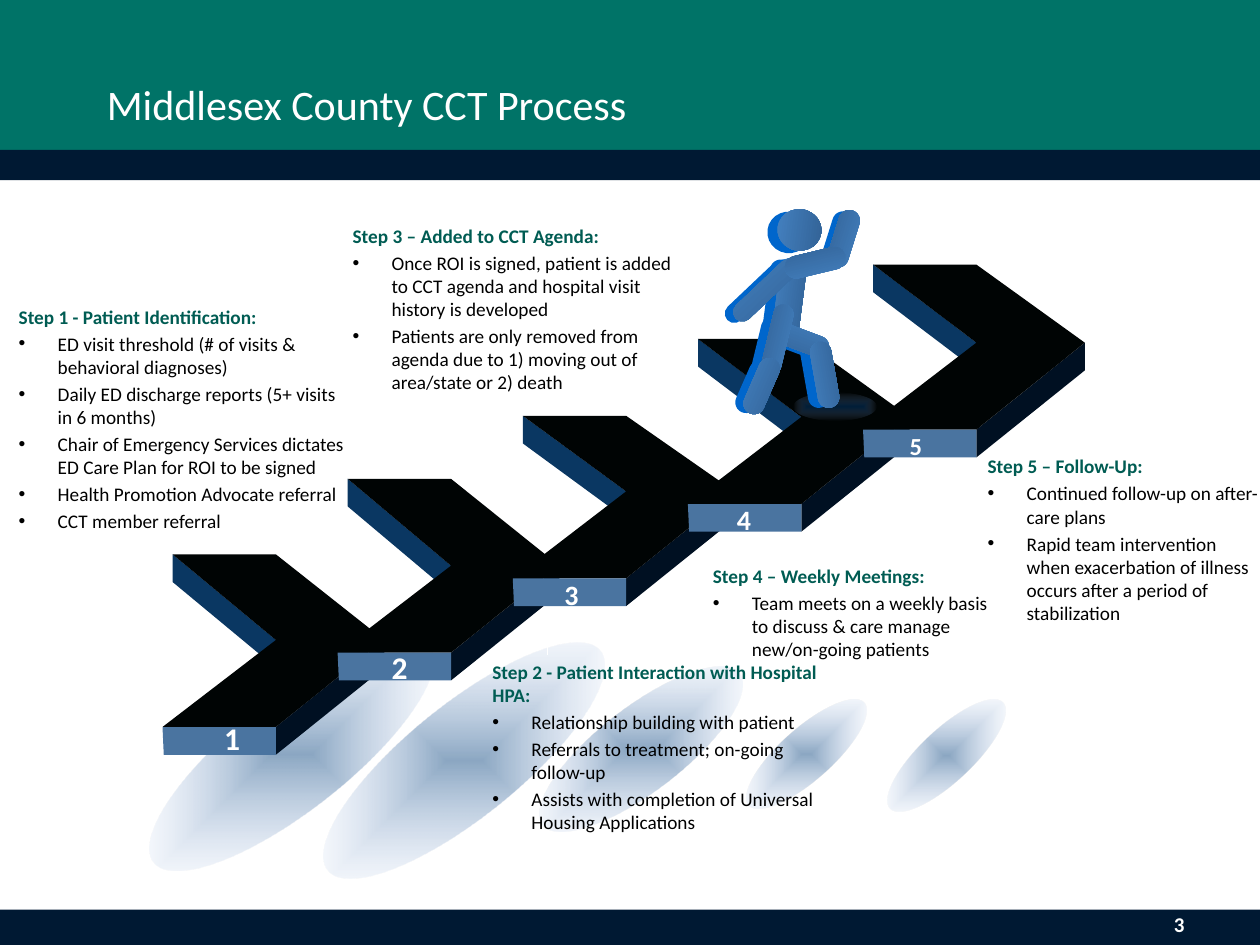
from lxml import etree
from pptx import Presentation, util as u
from pptx.dml.color import RGBColor
from pptx.enum import dml, shapes, text
from pptx.oxml import ns

FONT = "Calibri"
GREEN, NAVY, WHITE, BLACK = "007367", "001933", "FFFFFF", "000000"
TEAL, BLUE = "005C53", "0066CC"
SHADE = ("4481C1", "326295")
GLOW = ("003D7A", "A4BEEF")

STEPS = [
    (4.4, 18, (1.68, 5.67)), (3.8, 18, (3.01, 5.11)), (3.3, 16, (4.38, 4.53)),
    (2.69, 16, (5.75, 3.94)), (2.1, 14, (7.12, 3.35)),
]
GLOWS = [
    (0.93, 5.54, 2.77, 0.89, 321.9), (2.3, 5.59, 2.77, 0.89, 321.1),
    (4.1, 5.61, 1.97, 0.67, 322.4), (5.79, 5.78, 1.22, 0.41, 318.6),
    (6.9, 5.79, 1.22, 0.41, 316.9),
]
BACK = [
    ("limb", 6.56, 1.67, 0.17, 0.47, 197.4), ("limb", 6.29, 1.86, 0.16, 0.49, 256.5),
    ("head", 6.09, 1.68, 0.34, 0.33, 7.4), ("limb", 5.93, 2, 0.15, 0.64, 46.5),
    ("trunk", 6.08, 2.06, 0.21, 0.65, 7.4), ("limb", 6.19, 2.46, 0.16, 0.48, 110.5),
    ("limb", 6.38, 2.69, 0.17, 0.55, 350), ("limb", 6, 2.51, 0.15, 0.51, 193.6),
    ("limb", 5.89, 2.85, 0.17, 0.44, 23.7),
]
FRONT = [
    ("trunk", 6.16, 2.05, 0.21, 0.66, 7.4), ("limb", 6.26, 2.45, 0.17, 0.49, 110.5),
    ("limb", 6.46, 2.71, 0.17, 0.53, 350), ("head", 6.17, 1.66, 0.35, 0.33, 7.4),
    ("limb", 6, 1.98, 0.15, 0.65, 46.5), ("limb", 6.61, 1.66, 0.17, 0.47, 197.4),
    ("limb", 6.09, 2.41, 0.16, 0.57, 193.5), ("limb", 5.96, 2.83, 0.17, 0.47, 23.5),
    ("limb", 6.38, 1.84, 0.18, 0.49, 256.5),
]
LINES = [(1.52, 3.93, 4.29), (3.15, 3.32, 3.69), (4.34, 4.89, 5.19), (5.8, 4.31, 4.61)]
NOTES = [
    ((0.05, 2.37, 2.8, 1.94), "Step 1 - Patient Identification:",
     ["ED visit threshold (# of visits & behavioral diagnoses)",
      "Daily ED discharge reports (5+ visits in 6 months)",
      "Chair of Emergency Services dictates ED Care Plan for ROI to be signed",
      "Health Promotion Advocate referral", "CCT member referral"]),
    ((3.81, 5.19, 2.8, 1.74), "Step 2 - Patient Interaction with Hospital HPA:",
     ["Relationship building with patient", "Referrals to treatment; on-going follow-up",
      "Assists with completion of Universal Housing Applications"]),
    ((2.7, 1.73, 2.8, 1.48), "Step 3 – Added to CCT Agenda:",
     ["Once ROI is signed, patient is added to CCT agenda and hospital visit history is developed",
      "Patients are only removed from agenda due to 1) moving out of area/state or 2) death"]),
    ((5.56, 4.43, 2.54, 0.76), "Step 4 – Weekly Meetings:",
     ["Team meets on a weekly basis to discuss & care manage new/on-going patients"]),
    ((7.74, 3.56, 2.36, 1.33), "Step 5 – Follow-Up:",
     ["Continued follow-up on after-care plans",
      "Rapid team intervention when exacerbation of illness occurs after a period of stabilization"]),
]


def tint(code):
    """Turn a hex string into a colour."""
    return RGBColor.from_string(code)


def child(node, tag, **attrs):
    """Append a drawing element to a node."""
    return etree.SubElement(node, ns.qn(tag), attrs)


class Pen:
    """Hold the style and the current slide."""

    def __init__(self, slide, font):
        self.slide, self.font = slide, font

    def paint(self, shape, fill):
        """Fill a shape with one colour or a pair, with no line or shadow."""
        shape.shadow.inherit = False
        shape.line.fill.background()
        if isinstance(fill, str):
            shape.fill.solid()
            shape.fill.fore_color.rgb = tint(fill)
        else:
            shape.fill.gradient()
            shape.fill.gradient_angle = 0
            for stop, code, place in zip(shape.fill.gradient_stops, fill, (0, 1)):
                stop.color.rgb, stop.position = tint(code), place
        return shape

    def form(self, kind, box, fill, turn=0):
        """Draw a preset shape."""
        shape = self.slide.shapes.add_shape(kind, *map(u.Inches, box))
        shape.rotation = turn
        return self.paint(shape, fill)

    def glow(self, box, turn=0):
        """Draw an ellipse that fades out to its edge."""
        shape = self.form(shapes.MSO_SHAPE.OVAL, box, GLOW, turn)
        grad = shape._element.spPr.find(ns.qn("a:gradFill"))
        for code, alpha in zip(grad.iter(ns.qn("a:srgbClr")), ("45000", "0")):
            child(code, "a:alpha", val=alpha)
        grad.remove(grad.find(ns.qn("a:lin")))
        way = child(grad, "a:path", path="shape")
        child(way, "a:fillToRect", l="50000", t="50000", r="50000", b="50000")

    def limb(self, part, box, turn, fill):
        """Draw one part of the walking figure."""
        kind = shapes.MSO_SHAPE.OVAL if part == "head" else shapes.MSO_SHAPE.ROUNDED_RECTANGLE
        shape = self.form(kind, box, fill, turn)
        if part != "head":
            shape.adjustments[0] = 0.41 if part == "trunk" else 0.5

    def face(self, points, fill):
        """Draw a filled polygon."""
        spots = [(u.Inches(x), u.Inches(y)) for x, y in points]
        build = self.slide.shapes.build_freeform(*spots[0])
        build.add_line_segments(spots[1:])
        self.paint(build.convert_to_shape(), fill)

    def stair(self, left, top, base):
        """Draw one raised chevron."""
        right, mid, deep = left + 0.82, base - 0.69, 0.22
        tip, foot = right + 0.86, left - 0.08
        self.face([(left, top), (right, mid), (right, mid + deep), (left, top + deep)], "0A3762")
        self.face([(right, base), (tip, mid), (tip, mid + deep), (right, base + deep)], "001022")
        self.face([(left, top), (right, top), (tip, mid), (right, base), (foot, base),
                   (right, mid)], "000404")
        self.face([(foot, base), (right, base), (right, base + deep), (foot + 0.01, base + deep)],
                  "4A74A0")

    def line(self, x, top, end):
        """Draw a fine dotted upright."""
        line = self.slide.shapes.add_connector(
            shapes.MSO_CONNECTOR.STRAIGHT, *map(u.Inches, (x, top, x, end)))
        line.line.color.rgb, line.line.width = tint(WHITE), u.Pt(0.25)
        line.line.dash_style = dml.MSO_LINE.ROUND_DOT
        child(line._element.spPr, "a:effectLst")

    def style(self, para, size, code, bold):
        """Format the runs of a paragraph."""
        for run in para.runs:
            font = run.font
            font.name, font.size, font.bold = self.font, u.Pt(size), bold
            font.color.rgb = tint(code)

    def label(self, box, words, size, bold=True, wrap=True, side=text.PP_ALIGN.LEFT):
        """Write one white line."""
        frame = self.slide.shapes.add_textbox(*map(u.Inches, box)).text_frame
        frame.word_wrap, frame.text = wrap, words
        frame.vertical_anchor = text.MSO_ANCHOR.MIDDLE
        frame.paragraphs[0].alignment = side
        self.style(frame.paragraphs[0], size, WHITE, bold)

    def note(self, box, head, items):
        """Write a heading with bullets under it."""
        frame = self.slide.shapes.add_textbox(*map(u.Inches, box)).text_frame
        frame.word_wrap, frame.text = True, head
        self.style(frame.paragraphs[0], 11, TEAL, True)
        for item in items:
            para = frame.add_paragraph()
            para.text, para.space_before = item, u.Pt(2.2)
            props = para._p.get_or_add_pPr()
            props.set("marL", str(u.Inches(0.31)))
            props.set("indent", str(-u.Inches(0.31)))
            child(props, "a:buFont", typeface="Arial")
            child(props, "a:buChar", char="•")
            self.style(para, 11, BLACK, False)


def main():
    """Build and save the slide."""
    deck = Presentation()
    deck.slide_width, deck.slide_height = u.Inches(10), u.Inches(7.5)
    pen = Pen(deck.slides.add_slide(deck.slide_layouts[6]), FONT)
    for top, high, fill in ((0, 1.31, GREEN), (1.19, 0.24, NAVY), (7.22, 0.28, NAVY)):
        pen.form(shapes.MSO_SHAPE.RECTANGLE, (0, top, 10, high), fill)
    for *box, turn in GLOWS:
        pen.glow(box, turn)
    for i, (top, _, _) in enumerate(STEPS):
        pen.stair(1.37 + 1.39 * i, top, 5.77 - 0.59 * i)
    pen.glow((6.3, 3.12, 0.66, 0.22))
    for parts, fill in ((BACK, BLUE), (FRONT, SHADE)):
        for part, *box, turn in parts:
            pen.limb(part, box, turn, fill)
    for line in LINES:
        pen.line(*line)
    for i, (_, size, spot) in enumerate(STEPS, 1):
        pen.label((*spot, 0.32, 0.37), str(i), size, wrap=False)
    for note in NOTES:
        pen.note(*note)
    pen.label((0.75, 0.48, 8, 0.69), "Middlesex County CCT Process", 24, bold=False)
    pen.label((7.17, 7.18, 2.33, 0.31), "3", 12, side=text.PP_ALIGN.RIGHT)
    deck.save("out.pptx")


if __name__ == "__main__":
    main()
